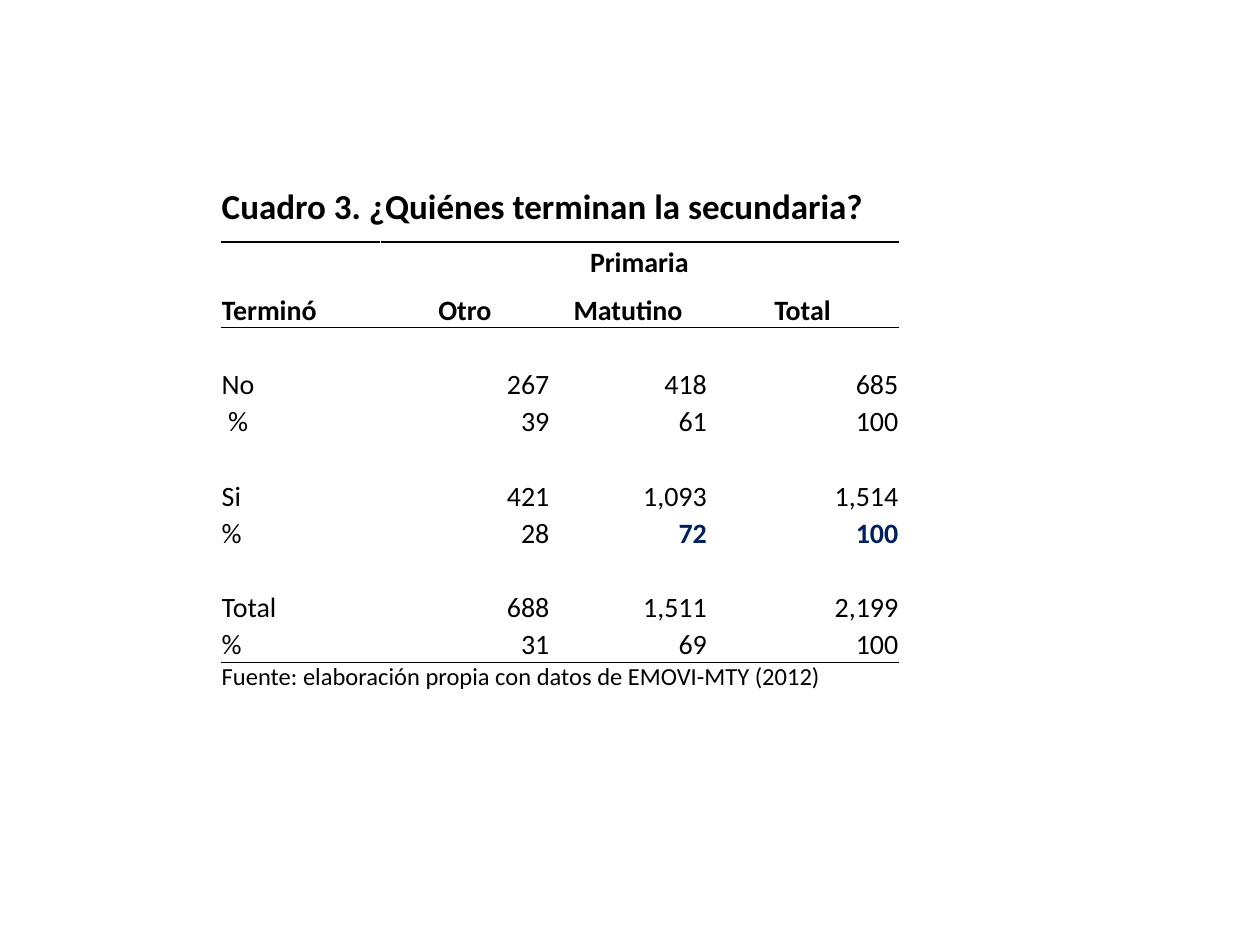
from lxml import etree
from pptx import Presentation, util as u
from pptx.dml.color import RGBColor
from pptx.enum import text
from pptx.oxml import ns

LEFT, CENTER, RIGHT = text.PP_ALIGN.LEFT, text.PP_ALIGN.CENTER, text.PP_ALIGN.RIGHT
BLACK, WHITE, NAVY = "000000", "FFFFFF", "002060"


def color(value):
    """Turn a hex string into a colour."""
    return RGBColor.from_string(value)


class Sheet:
    """Holds the text style and the current slide."""

    def __init__(self, deck, font, size):
        """Add a blank slide to the deck."""
        self.deck, self.font, self.size = deck, font, size
        self.slide = deck.slides.add_slide(deck.slide_layouts[6])

    def table(self, left, top, widths, heights):
        """Add a plain white table placed by shares of the slide's size."""
        frame = self.slide.shapes.add_table(
            len(heights), len(widths),
            int(self.deck.slide_width * left), int(self.deck.slide_height * top),
            u.Inches(sum(widths)), u.Inches(sum(heights)))
        grid = frame.table
        grid.first_row = grid.horz_banding = False
        for column, width in zip(grid.columns, widths):
            column.width = u.Inches(width)
        for row, height in zip(grid.rows, heights):
            row.height = u.Inches(height)
        for cell in grid.iter_cells():
            cell.fill.solid()
            cell.fill.fore_color.rgb = color(WHITE)
            cell.margin_left = cell.margin_right = cell.margin_top = cell.margin_bottom = 0
            self.label(cell, "")
        return grid

    def label(self, cell, words, align=LEFT, size=None, bold=False, ink=BLACK,
              anchor=text.MSO_ANCHOR.BOTTOM):
        """Put one styled paragraph into a cell."""
        cell.vertical_anchor = anchor
        line = cell.text_frame.paragraphs[0]
        line.text, line.alignment = words, align
        line.font.name, line.font.size = self.font, u.Pt(size or self.size)
        line.font.bold, line.font.color.rgb = bold, color(ink)

    def edge(self, cell, side):
        """Draw a thin black border on one side of a cell."""
        props = cell._tc.get_or_add_tcPr()
        border = etree.Element(ns.qn(f"a:ln{side}"), w=str(u.Pt(1)))
        fill = etree.SubElement(border, ns.qn("a:solidFill"))
        etree.SubElement(fill, ns.qn("a:srgbClr"), val=BLACK)
        drawn = [part for part in props if part.tag.startswith(ns.qn("a:ln"))]
        props.insert(len(drawn), border)

    def rule(self, grid, row, columns):
        """Draw a line below a row over the given columns."""
        for column in columns:
            self.edge(grid.cell(row, column), "B")
            self.edge(grid.cell(row + 1, column), "T")


def main():
    """Build the slide with the schooling table."""
    deck = Presentation()
    deck.slide_width, deck.slide_height = u.Inches(10), u.Inches(7.5)
    sheet = Sheet(deck, "Calibri", 16)

    body = [
        ("No", "267", "418", "685"),
        (" %", "39", "61", "100"),
        (),
        ("Si", "421", "1,093", "1,514"),
        ("% ", "28", "72", "100"),
        (),
        ("Total", "688", "1,511", "2,199"),
        ("% ", "31", "69", "100"),
    ]
    first, columns = 4, range(4)
    source = first + len(body)
    body_height = 2.66 / (len(body) + 1)
    heights = [0.55, 0.3, 0.38] + [body_height] * (len(body) + 1) + [0.23]
    grid = sheet.table(0.176, 1.37 / 7.5, [1.26, 1.34, 1.25, 1.52], heights)

    for start, end in [((0, 0), (0, 3)), ((1, 0), (2, 0)),
                       ((1, 1), (1, 3)), ((source, 0), (source, 3))]:
        grid.cell(*start).merge(grid.cell(*end))

    sheet.label(grid.cell(0, 0), "Cuadro 3. ¿Quiénes terminan la secundaria?",
                size=20, bold=True, anchor=text.MSO_ANCHOR.MIDDLE)
    sheet.label(grid.cell(1, 0), "Terminó", bold=True)
    sheet.label(grid.cell(1, 1), "Primaria", CENTER, bold=True)
    for column, shift in enumerate(["Otro", "Matutino", "Total"], 1):
        sheet.label(grid.cell(2, column), shift, CENTER, bold=True)

    highlights = {(8, 2), (8, 3)}
    for row, values in enumerate(body, first):
        for column, value in enumerate(values):
            key = (row, column) in highlights
            sheet.label(grid.cell(row, column), value, RIGHT if column else LEFT,
                        bold=key, ink=NAVY if key else BLACK)
    sheet.label(grid.cell(source, 0),
                "Fuente: elaboración propia con datos de EMOVI-MTY (2012)", size=14)

    for row in (0, 2, source - 1):
        sheet.rule(grid, row, columns)
    sheet.edge(grid.cell(1, 0), "B")
    deck.save("out.pptx")


if __name__ == "__main__":
    main()
